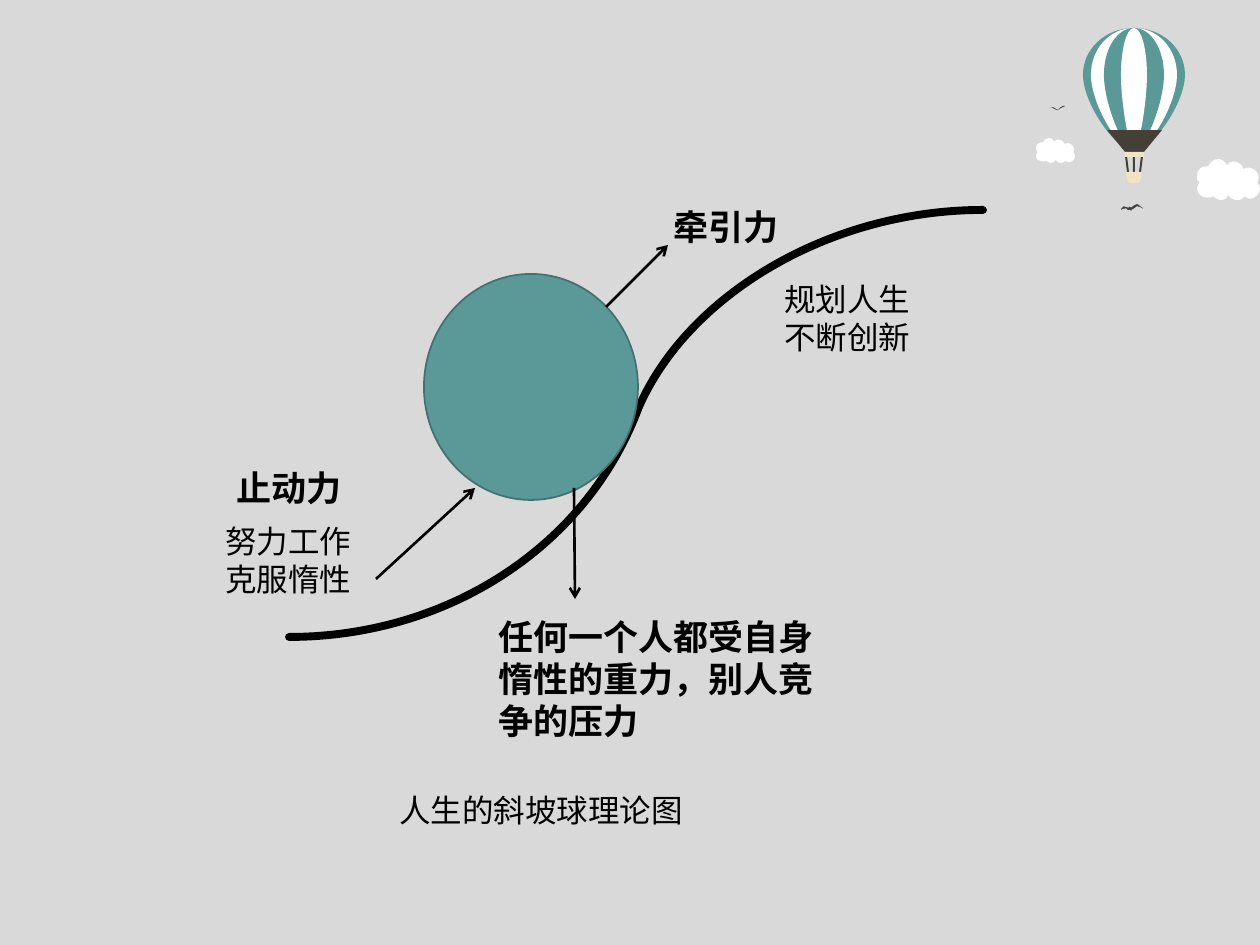
from copy import deepcopy

from lxml import etree
from pptx import Presentation
from pptx.dml.color import RGBColor
from pptx.enum.shapes import MSO_CONNECTOR, MSO_SHAPE
from pptx.enum.text import MSO_AUTO_SIZE
from pptx.oxml.ns import qn
from pptx.util import Pt

EMU_PER_PX = 914400 / 126
FINE = 100  # freeform units per px
RECTANGLE, OVAL = MSO_SHAPE.RECTANGLE, MSO_SHAPE.OVAL
STRAIGHT = MSO_CONNECTOR.STRAIGHT
FIT_SHAPE = MSO_AUTO_SIZE.SHAPE_TO_FIT_TEXT

TEAL, WHITE, BLACK = "5B9898", "FFFFFF", "000000"
BROWN, CREAM, BIRD, BACKGROUND = "463F37", "F1E4C4", "414042", "D9D9D9"
HEADING = {"name": "Arial", "size": Pt(20), "bold": True}
BODY = {"name": "Arial", "size": Pt(18), "bold": False}

# Outlines in percent of their box: a start, then curves
# (control, control, end) or straight lines (end)
CLOUD = [(34, 0),
         (26, 0, 20, 9, 18, 18), (16, 18, 16, 18, 14, 18), (6, 18, 0, 27, 0, 42),
         (0, 48, 0, 52, 4, 58), (2, 61, 0, 67, 0, 73), (0, 85, 8, 94, 16, 94),
         (20, 94, 24, 94, 26, 91), (28, 94, 34, 100, 38, 100),
         (44, 100, 48, 94, 50, 88), (54, 97, 58, 100, 64, 100),
         (70, 100, 72, 97, 76, 91), (78, 94, 82, 97, 84, 97),
         (92, 97, 100, 85, 100, 73), (100, 67, 98, 61, 96, 58),
         (96, 52, 98, 48, 98, 45), (98, 33, 90, 21, 82, 21),
         (78, 21, 76, 24, 74, 24), (72, 15, 66, 6, 58, 6),
         (54, 6, 50, 9, 48, 15), (44, 6, 40, 0, 34, 0)]
SMALL_BIRD = [(83, 20),
              (75, 20, 58, 60, 58, 80), (50, 80, 33, 60, 25, 40),
              (17, 40, 0, 40, 0, 40), (0, 40, 25, 40, 25, 60),
              (33, 80, 50, 80, 50, 80), (50, 80, 58, 100, 58, 80),
              (58, 80, 67, 60, 67, 60), (75, 60, 83, 20, 100, 20),
              (100, 20, 100, 0, 83, 20)]
LARGE_BIRD = [(0, 83),
              (0, 83, 0, 50, 12, 33), (18, 33, 24, 33, 30, 50),
              (41, 67, 35, 50, 35, 33), (35, 33, 41, 50, 47, 50),
              (53, 50, 59, 0, 72, 0), (80, 0, 82, 22, 88, 33),
              (100, 50, 100, 67, 100, 67), (100, 67, 88, 33, 71, 33),
              (65, 50, 53, 83, 47, 83), (47, 83, 47, 83, 47, 100),
              (47, 100, 41, 83, 41, 83), (41, 83, 35, 83, 30, 83),
              (24, 67, 24, 50, 12, 67), (6, 67, 0, 83, 0, 83)]
ENVELOPE = [(50, 0),
            (78, 0, 100, 17, 100, 38), (100, 62, 67, 100, 50, 100),
            (33, 100, 0, 62, 0, 38), (0, 17, 22, 0, 50, 0)]
BASKET = [(0, 0), (100, 0), (100, 45, 90, 90, 75, 100), (25, 100),
          (10, 90, 0, 45, 0, 0)]
LEFT_ROPE = [(0, 0), (50, 0), (100, 100), (50, 100)]
RIGHT_ROPE = [(50, 0), (100, 0), (50, 100), (0, 100)]
SKIRT = [(0, 0), (100, 0), (67, 100), (33, 100)]
# Each slope is a curve followed by the corner of its sector
UPPER_SLOPE = [(0, 76), (14, 33, 55, 0, 100, 0), (100, 100)]
LOWER_SLOPE = [(100, 31), (85, 73, 45, 100, 0, 100), (0, 0)]


def px(value):
    return round(value * EMU_PER_PX)


def color(hex_string):
    return RGBColor.from_string(hex_string)


def paint(shape, fill=None, line=None, width=1):
    shape.shadow.inherit = False
    if fill:
        shape.fill.solid()
        shape.fill.fore_color.rgb = color(fill)
    else:
        shape.fill.background()
    if line:
        shape.line.color.rgb = color(line)
        shape.line.width = Pt(width)
    else:
        shape.line.fill.background()
    return shape


def add_preset(slide, kind, box, fill, line=None):
    return paint(slide.shapes.add_shape(kind, *map(px, box)), fill, line)


def add_outline(slide, box, outline, close=True):
    """Fit an outline into a box, turning its curved segments into Béziers."""
    left, top, width, height = box
    segments = [[(round((left + x * width / 100) * FINE), round((top + y * height / 100) * FINE))
                 for x, y in zip(segment[::2], segment[1::2])] for segment in outline]
    ends = [segment[-1] for segment in segments]
    builder = slide.shapes.build_freeform(*ends[0], scale=EMU_PER_PX / FINE)
    builder.add_line_segments(ends[1:], close=close)
    shape = builder.convert_to_shape()
    origin_x, origin_y = (min(values) for values in zip(*ends))
    lines = list(shape._element.iter(qn("a:lnTo")))
    for line, segment in zip(lines, segments[1:]):
        if len(segment) == 3:
            line.tag = qn("a:cubicBezTo")
            line.clear()
            for x, y in segment:
                etree.SubElement(line, qn("a:pt"), x=str(x - origin_x), y=str(y - origin_y))
    return shape


def add_slope(slide, box, outline):
    """Stroke only the curve; the sector that spans the box has no line."""
    shape = paint(add_outline(slide, box, outline, close=False), line=BLACK, width=4.5)
    shape.line._get_or_add_ln().set("cap", "rnd")
    curve = next(shape._element.iter(qn("a:path")))
    sector = deepcopy(curve)
    sector.set("stroke", "0")
    etree.SubElement(sector, qn("a:close"))
    curve.remove(curve[-1])
    curve.set("fill", "none")
    curve.addnext(sector)


def add_arrow(slide, start, end):
    arrow = slide.shapes.add_connector(STRAIGHT, *map(px, start + end))
    arrow.line.color.rgb = color(BLACK)
    arrow.line.width = Pt(1.5)
    etree.SubElement(arrow.line._get_or_add_ln(), qn("a:tailEnd"), type="arrow")
    etree.SubElement(arrow._element.spPr, qn("a:effectLst"))


def add_text(slide, box, lines, font_format, indent=0):
    frame = slide.shapes.add_textbox(*map(px, box)).text_frame
    frame.word_wrap = True
    frame.auto_size = FIT_SHAPE
    for index, line in enumerate(lines):
        paragraph = frame.add_paragraph() if index else frame.paragraphs[0]
        paragraph._p.get_or_add_pPr().set("marL", str(px(indent)))
        run = paragraph.add_run()
        run.text = line
        run.font.color.rgb = color(BLACK)
        for name, value in font_format.items():
            setattr(run.font, name, value)


def draw_balloon(slide, left, top):
    center = left + 51
    # Ropes and basket
    paint(add_outline(slide, (center - 9, top + 128, 4, 16), LEFT_ROPE), BROWN)
    add_preset(slide, RECTANGLE, (center - 1, top + 128, 2, 16), BROWN)
    paint(add_outline(slide, (center + 5, top + 128, 4, 16), RIGHT_ROPE), BROWN)
    paint(add_outline(slide, (center - 8, top + 144, 16, 11), BASKET), CREAM)
    # Nested stripes, widest first
    for half_width, fill in ((51, TEAL), (43, WHITE), (30, TEAL), (13, WHITE)):
        box = (center - half_width, top, 2 * half_width, 123)
        paint(add_outline(slide, box, ENVELOPE), fill)
    # Skirt and rim
    paint(add_outline(slide, (center - 27, top + 102, 55, 22), SKIRT), BROWN)
    add_preset(slide, RECTANGLE, (center - 9, top + 124, 19, 5), CREAM)


def draw_sky(slide, left, top):
    for x, y, width, height, outline, fill in (
            (161, 131, 63, 41, CLOUD, WHITE), (0, 110, 39, 25, CLOUD, WHITE),
            (14, 77, 15, 6, SMALL_BIRD, BIRD), (85, 176, 22, 7, LARGE_BIRD, BIRD)):
        paint(add_outline(slide, (left + x, top + y, width, height), outline), fill)
    draw_balloon(slide, left + 47, top)


def draw_slope(slide, left, top):
    # Two curves meeting where the ball rests
    add_slope(slide, (left + 349, top, 345, 262), UPPER_SLOPE)
    add_slope(slide, (left, top + 97, 349, 330), LOWER_SLOPE)
    # Ball and forces
    add_preset(slide, OVAL, (left + 135, top + 64, 214, 226), TEAL, "437070")
    for x1, y1, x2, y2 in ((285, 278, 286, 389), (317, 97, 379, 35), (87, 369, 186, 278)):
        add_arrow(slide, (left + x1, top + y1), (left + x2, top + y2))


def draw_labels(slide, left, top):
    for x, y, width, height, lines, font_format, indent in (
            (90, 586, 678, 50, ["人生的斜坡球理论图"], BODY, 98),
            (462, 0, 175, 55, ["牵引力"], HEADING, 0),
            (25, 261, 175, 55, ["止动力"], HEADING, 0),
            (287, 410, 367, 140, ["任何一个人都受自身惰性的重力，别人竞争的压力"], HEADING, 0),
            (0, 317, 200, 89, ["努力工作", "克服惰性"], BODY, 14),
            (544, 75, 200, 89, ["规划人生", "不断创新"], BODY, 29)):
        add_text(slide, (left + x, top + y, width, height), lines, font_format, indent)


def main():
    presentation = Presentation()
    presentation.slide_width, presentation.slide_height = px(1260), px(945)
    slide = presentation.slides.add_slide(presentation.slide_layouts[6])
    slide.background.fill.solid()
    slide.background.fill.fore_color.rgb = color(BACKGROUND)
    draw_sky(slide, 1036, 28)
    draw_slope(slide, 289, 210)
    draw_labels(slide, 199, 199)
    presentation.save("out.pptx")


if __name__ == "__main__":
    main()
